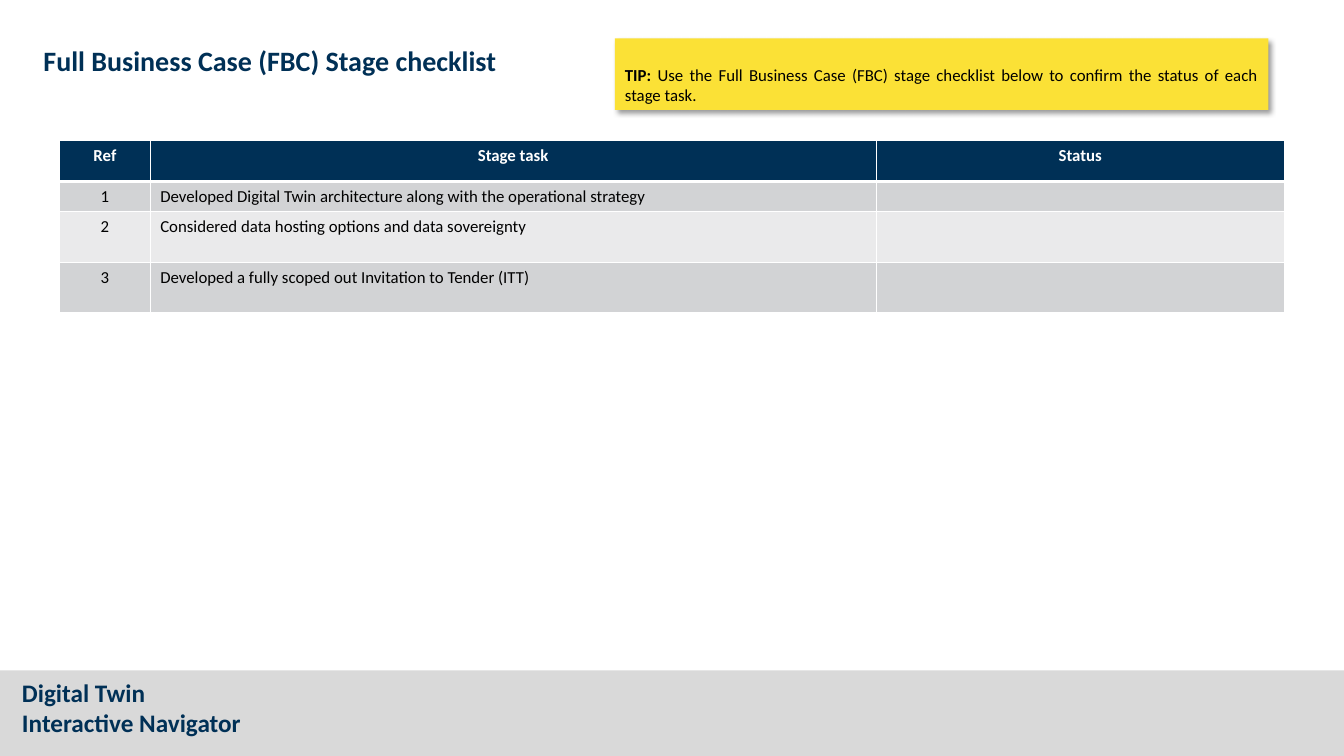
from dataclasses import dataclass

from lxml import etree
from pptx import Presentation
from pptx import util as u
from pptx.dml.color import RGBColor
from pptx.enum import shapes, text
from pptx.oxml import ns

SLIDE_WIDTH = u.Inches(13.33)
SLIDE_HEIGHT = u.Inches(7.5)
FONT = "Calibri"
COLORS = {
    "navy": "003056",
    "band": "D9D9D9",
    "tip": "FBE136",
    "dark row": "D2D3D5",
    "light row": "EAEAEB",
    "white": "FFFFFF",
    "black": "000000",
}


def across(percent: float) -> int:
    return round(SLIDE_WIDTH * percent / 100)


def down(percent: float) -> int:
    return round(SLIDE_HEIGHT * percent / 100)


@dataclass(frozen=True)
class Box:
    left: float
    top: float
    width: float
    height: float

    def lengths(self) -> tuple[int, int, int, int]:
        return across(self.left), down(self.top), across(self.width), down(self.height)


@dataclass(frozen=True)
class Column:
    heading: str
    width: float
    align: text.PP_ALIGN


@dataclass(frozen=True)
class Row:
    values: tuple[str, ...]
    height: float
    fill: str
    color: str = "black"
    header: bool = False


BAND = Box(0, 88.67, 100, 11.33)
NAVIGATOR = Box(0.9, 88.93, 30.38, 9.47)
TITLE = Box(2.48, 5.07, 38.63, 5.87)
TIP = Box(45.76, 5.07, 48.61, 9.47)
CHECKLIST = Box(4.43, 18.53, 91.14, 22.68)

COLUMNS = (
    Column("Ref", 6.75, text.PP_ALIGN.CENTER),
    Column("Stage task", 54.01, text.PP_ALIGN.LEFT),
    Column("Status", 30.38, text.PP_ALIGN.LEFT),
)
ROWS = (
    Row(tuple(column.heading for column in COLUMNS), 5.47, "navy", "white", True),
    Row(("1", "Developed Digital Twin architecture along with the operational strategy", ""),
        3.87, "dark row"),
    Row(("2", "Considered data hosting options and data sovereignty", ""), 6.67, "light row"),
    Row(("3", "Developed a fully scoped out Invitation to Tender (ITT)", ""), 6.67, "dark row"),
)


def rgb(name: str) -> RGBColor:
    return RGBColor.from_string(COLORS[name])


def style(font, size: float, color: str, bold: bool | None = None) -> None:
    font.name = FONT
    font.size = u.Pt(size)
    font.color.rgb = rgb(color)
    font.bold = bold


def add_rectangle(slide, box: Box, color: str):
    shape = slide.shapes.add_shape(shapes.MSO_SHAPE.RECTANGLE, *box.lengths())
    shape.fill.solid()
    shape.fill.fore_color.rgb = rgb(color)
    shape.line.fill.background()
    shape.shadow.inherit = False
    return shape


def add_shadow(shape) -> None:
    effects = shape._element.spPr.find(ns.qn("a:effectLst"))
    shadow = etree.SubElement(
        effects, ns.qn("a:outerShdw"), blurRad=str(u.Pt(4)), dist=str(u.Pt(3)),
        dir="2700000", algn="tl", rotWithShape="0")
    color = etree.SubElement(shadow, ns.qn("a:srgbClr"), val=COLORS["black"])
    etree.SubElement(color, ns.qn("a:alpha"), val="40000")


def add_footer(slide) -> None:
    add_rectangle(slide, BAND, "band")
    frame = slide.shapes.add_textbox(*NAVIGATOR.lengths()).text_frame
    frame.word_wrap = True
    frame.text = "Digital Twin\nInteractive Navigator"
    for paragraph in frame.paragraphs:
        style(paragraph.font, 18, "navy", True)


def set_title(slide) -> None:
    title = slide.shapes.title
    title.left, title.top, title.width, title.height = TITLE.lengths()
    frame = title.text_frame
    frame.text = "Full Business Case (FBC) Stage checklist"
    frame.auto_size = text.MSO_AUTO_SIZE.NONE
    frame.vertical_anchor = text.MSO_ANCHOR.MIDDLE
    paragraph = frame.paragraphs[0]
    paragraph.alignment = text.PP_ALIGN.LEFT
    style(paragraph.font, 20, "navy", True)


def add_tip(slide) -> None:
    shape = add_rectangle(slide, TIP, "tip")
    add_shadow(shape)
    frame = shape.text_frame
    frame.word_wrap = True
    frame.vertical_anchor = text.MSO_ANCHOR.BOTTOM
    paragraph = frame.paragraphs[0]
    paragraph.alignment = text.PP_ALIGN.JUSTIFY
    style(paragraph.font, 12, "black")
    label = paragraph.add_run()
    label.text = "TIP: "
    label.font.bold = True
    paragraph.add_run().text = (
        "Use the Full Business Case (FBC) stage checklist below "
        "to confirm the status of each stage task.")


def set_borders(cell, top: float, bottom: float) -> None:
    properties = cell._tc.get_or_add_tcPr()
    for side, width in {"L": 1, "R": 1, "T": top, "B": bottom}.items():
        line = etree.SubElement(properties, ns.qn(f"a:ln{side}"), w=str(u.Pt(width)))
        fill = etree.SubElement(line, ns.qn("a:solidFill"))
        etree.SubElement(fill, ns.qn("a:srgbClr"), val=COLORS["white"])


def fill_cell(cell, value: str, row: Row, column: Column, below_header: bool) -> None:
    set_borders(cell, 3 if below_header else 1, 3 if row.header else 1)
    cell.fill.solid()
    cell.fill.fore_color.rgb = rgb(row.fill)
    cell.text = value
    paragraph = cell.text_frame.paragraphs[0]
    paragraph.alignment = text.PP_ALIGN.CENTER if row.header else column.align
    style(paragraph.font, 12, row.color, row.header)
    if not value:
        etree.SubElement(paragraph._p, ns.qn("a:endParaRPr"), sz="1200")


def add_checklist(slide) -> None:
    table = slide.shapes.add_table(len(ROWS), len(COLUMNS), *CHECKLIST.lengths()).table
    for index, column in enumerate(COLUMNS):
        table.columns[index].width = across(column.width)
    for row_index, row in enumerate(ROWS):
        table.rows[row_index].height = down(row.height)
        for column_index, (value, column) in enumerate(zip(row.values, COLUMNS)):
            fill_cell(table.cell(row_index, column_index), value, row, column, row_index == 1)


def main() -> None:
    presentation = Presentation()
    presentation.slide_width = SLIDE_WIDTH
    presentation.slide_height = SLIDE_HEIGHT
    slide = presentation.slides.add_slide(presentation.slide_layouts.get_by_name("Title Only"))
    add_footer(slide)
    set_title(slide)
    add_tip(slide)
    add_checklist(slide)
    presentation.save("out.pptx")


if __name__ == "__main__":
    main()
